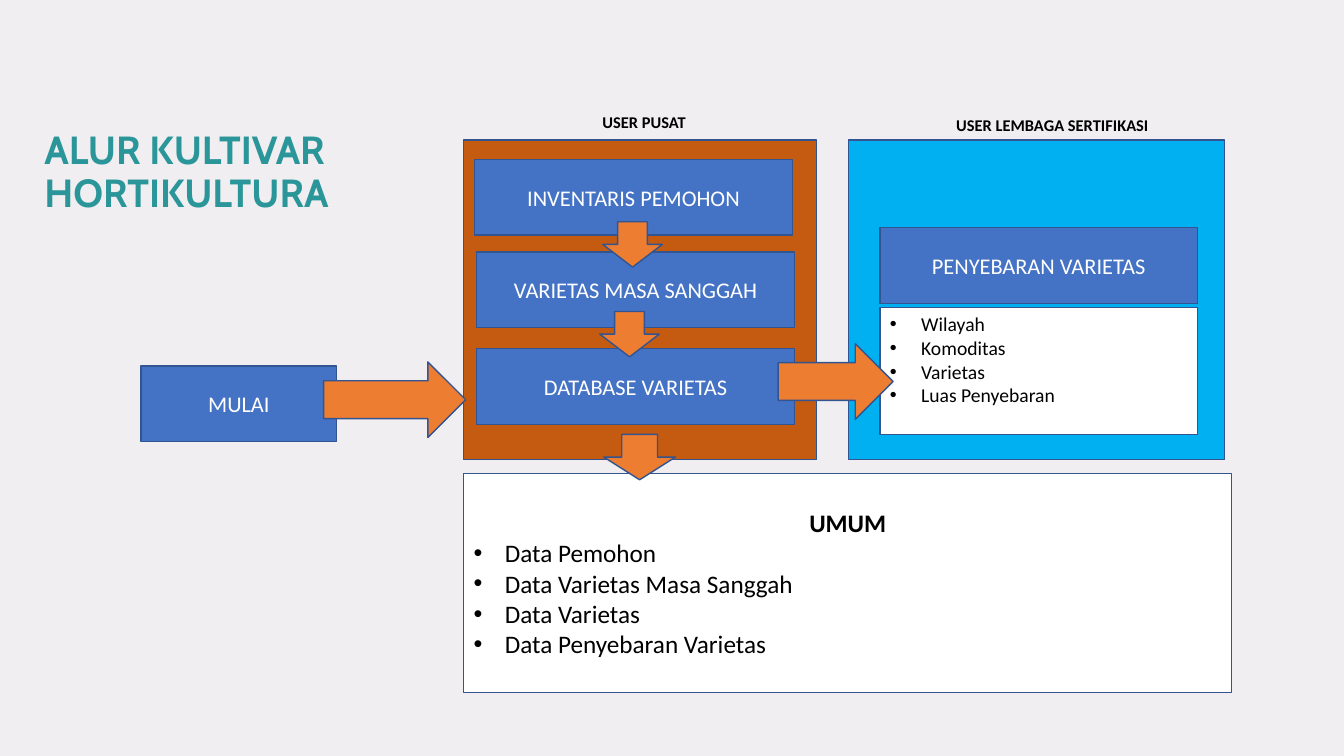
from dataclasses import dataclass

from lxml.etree import SubElement
from pptx import Presentation
from pptx.dml.color import RGBColor
from pptx.enum.shapes import MSO_SHAPE as Preset
from pptx.enum.text import MSO_ANCHOR as Anchor, MSO_AUTO_SIZE as AutoSize, PP_ALIGN as Align
from pptx.oxml.ns import qn
from pptx.util import Inches, Pt


@dataclass(frozen=True)
class Theme:
    background: str = "F0EEF0"
    title: str = "2B9699"
    outline: str = "325491"
    step: str = "4472C4"
    arrow: str = "ED7D31"
    central: str = "C55A11"
    agency: str = "00B0F0"
    light: str = "FFFFFF"
    dark: str = "000000"
    title_font: str = "Cabin"
    body_font: str = "Calibri"
    title_size: float = 28
    caption_size: float = 11.7
    step_size: float = 16
    detail_size: float = 14
    public_size: float = 18


THEME = Theme()
CELL = 0.1  # side of one grid cell in inches
COLUMNS, ROWS = 133.33, 75

# Content: frames are (column, row, columns wide, rows high)
TITLE = ("ALUR KULTIVAR HORTIKULTURA", (3.4, 8.6, 45.7, 17.2))
PANELS = [
    ((84.2, 13.9, 37.3, 31.7), THEME.agency),
    ((46, 13.9, 35, 31.7), THEME.central),
]
CAPTIONS = [
    ("USER PUSAT", (46.2, 10.1, 35.4, 4.2)),
    ("USER LEMBAGA SERTIFIKASI", (86.7, 10.6, 35.4, 3.8)),
]
STEP_WIDTH, STEP_HEIGHT = 31.5, 7.5
STEPS = [
    ("MULAI", 14, 36.3, 19.4),
    ("INVENTARIS PEMOHON", 47.1, 15.8, STEP_WIDTH),
    ("VARIETAS MASA SANGGAH", 47.3, 25, STEP_WIDTH),
    ("DATABASE VARIETAS", 47.3, 34.6, STEP_WIDTH),
    ("PENYEBARAN VARIETAS", 87.3, 22.6, STEP_WIDTH),
]
DETAILS = ["Wilayah", "Komoditas", "Varietas", "Luas Penyebaran"]
DETAILS_FRAME = (87.3, 30.5, STEP_WIDTH, 12.6)
PUBLIC_HEADING = "UMUM"
PUBLIC_DATA = ["Data Pemohon", "Data Varietas Masa Sanggah", "Data Varietas",
               "Data Penyebaran Varietas"]
PUBLIC_FRAME = (46, 47, 76.2, 21.7)
# Arrows: centre column, centre row, length, breadth, rotation
ARROWS = [
    (39.15, 39.65, 14.1, 7.5, 0),
    (82.9, 37.85, 11.4, 7.5, 0),
    (62.75, 24.25, 4.5, 5.9, 90),
    (62.45, 33.15, 4.5, 5.9, 90),
    (63.45, 45.35, 4.5, 7.1, 90),
]


def place(frame):
    return [Inches(cells * CELL) for cells in frame]


def write(shape, lines, size, color, font=THEME.body_font, bold=False,
          align=Align.CENTER, anchor=Anchor.MIDDLE, spacing=None):
    frame = shape.text_frame
    for name, value in {"word_wrap": True, "auto_size": AutoSize.NONE,
                        "vertical_anchor": anchor}.items():
        setattr(frame, name, value)
    for index, line in enumerate(lines):
        para = frame.paragraphs[0] if index == 0 else frame.add_paragraph()
        para.alignment, para.line_spacing = align, spacing
        span = para.add_run()
        span.text = line
        for name, value in {"name": font, "size": Pt(size), "bold": bold}.items():
            setattr(span.font, name, value)
        span.font.color.rgb = RGBColor.from_string(color)
    return frame.paragraphs


def add_bullets(paragraphs):
    for para in paragraphs:
        para.alignment = Align.LEFT
        properties = para._p.get_or_add_pPr()
        properties.set("marL", str(Inches(0.31)))
        properties.set("indent", str(-Inches(0.31)))
        SubElement(properties, qn("a:buFont"), typeface="Arial")
        SubElement(properties, qn("a:buChar"), char="•")


def add_block(page, frame, fill, preset=Preset.RECTANGLE):
    block = page.shapes.add_shape(preset, *place(frame))
    block.shadow.inherit = False
    block.fill.solid()
    block.fill.fore_color.rgb = RGBColor.from_string(fill)
    block.line.color.rgb = RGBColor.from_string(THEME.outline)
    block.line.width = Pt(1)
    return block


def main():
    deck = Presentation()
    deck.slide_width, deck.slide_height = place((COLUMNS, ROWS))
    page = deck.slides.add_slide(deck.slide_layouts[5])
    page.background.fill.solid()
    page.background.fill.fore_color.rgb = RGBColor.from_string(THEME.background)

    # Title
    text, frame = TITLE
    title = page.shapes.title
    title.left, title.top, title.width, title.height = place(frame)
    write(title, [text], THEME.title_size, THEME.title, THEME.title_font,
          bold=True, align=Align.LEFT, spacing=0.9)

    # User panels and their captions
    for frame, fill in PANELS:
        add_block(page, frame, fill)
    for text, frame in CAPTIONS:
        caption = page.shapes.add_textbox(*place(frame))
        write(caption, [text], THEME.caption_size, THEME.dark, bold=True, spacing=0.9)

    # Process steps
    for text, column, row, width in STEPS:
        step = add_block(page, (column, row, width, STEP_HEIGHT), THEME.step)
        write(step, [text], THEME.step_size, THEME.light)

    # Distribution details and public data
    details = add_block(page, DETAILS_FRAME, THEME.light)
    add_bullets(write(details, DETAILS, THEME.detail_size, THEME.dark, anchor=Anchor.TOP))
    public = add_block(page, PUBLIC_FRAME, THEME.light)
    heading, *items = write(public, [PUBLIC_HEADING, *PUBLIC_DATA],
                            THEME.public_size, THEME.dark)
    heading.runs[0].font.bold = True
    add_bullets(items)

    # Flow arrows
    for column, row, length, breadth, rotation in ARROWS:
        frame = (column - length / 2, row - breadth / 2, length, breadth)
        arrow = add_block(page, frame, THEME.arrow, Preset.RIGHT_ARROW)
        arrow.rotation = rotation

    deck.save("out.pptx")


if __name__ == "__main__":
    main()
